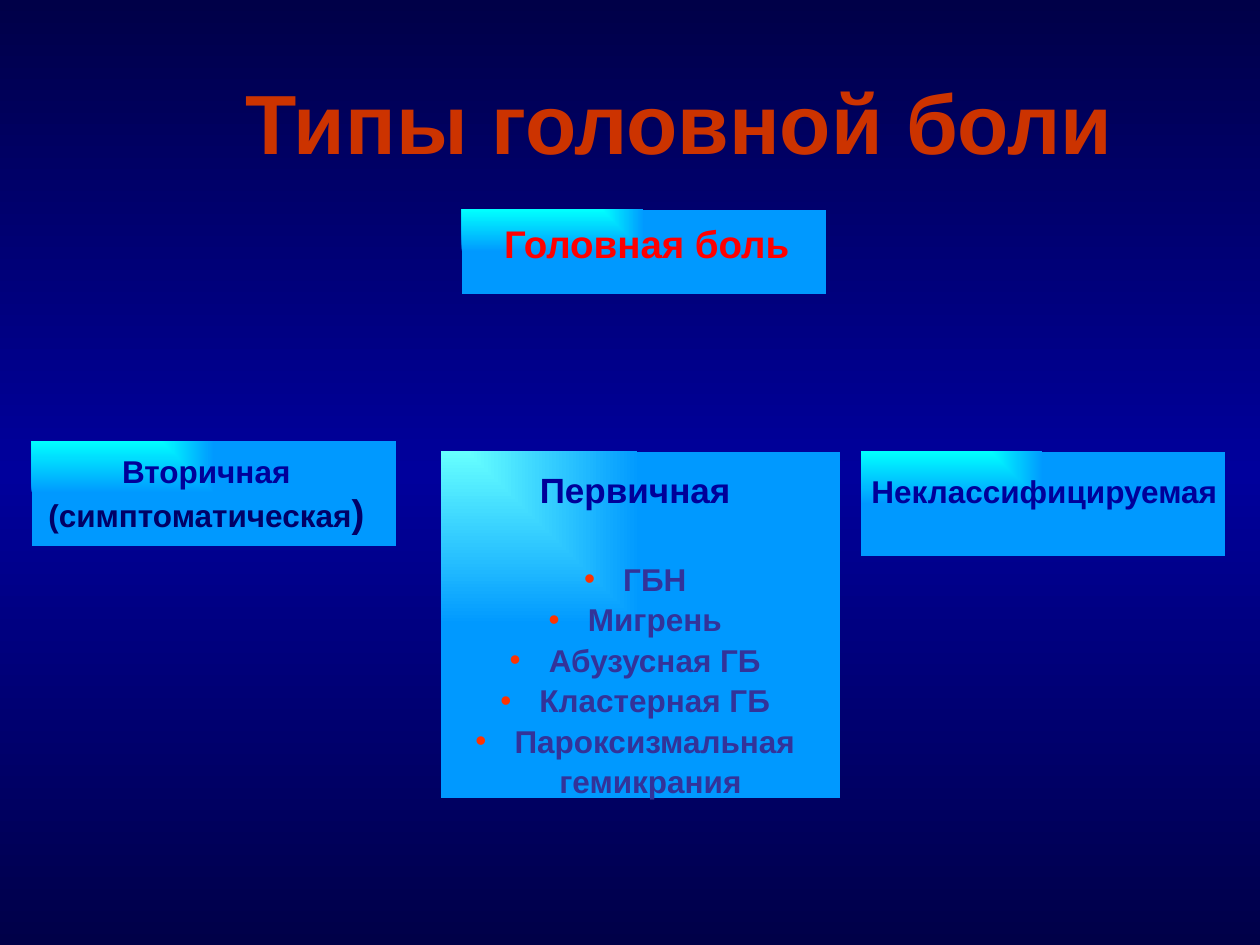
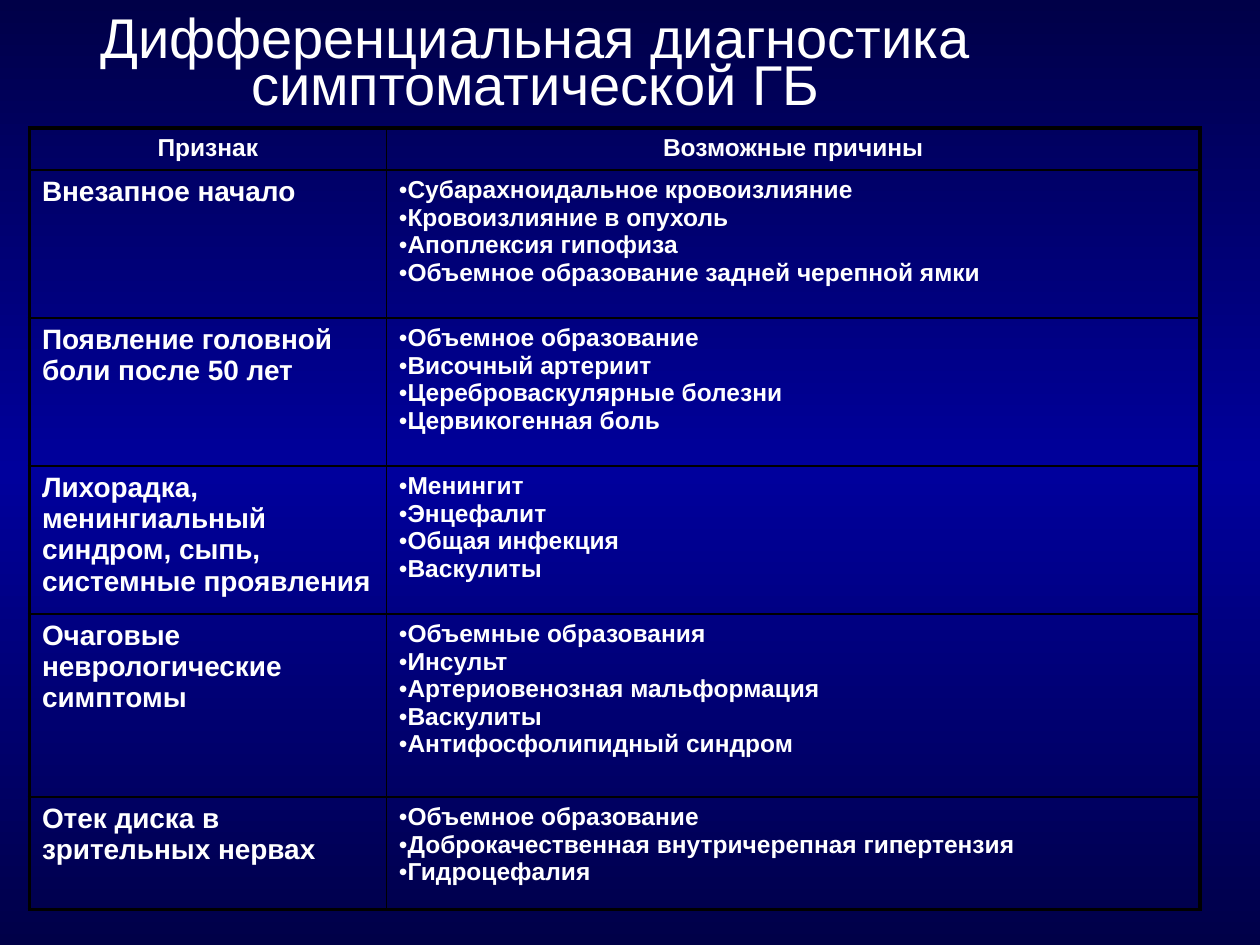
from dataclasses import dataclass

from lxml.etree import SubElement
from pptx import Presentation
from pptx.dml.color import RGBColor as RGB
from pptx.enum.shapes import MSO_SHAPE as SHAPE
from pptx.enum.text import MSO_ANCHOR as ANCHOR, PP_ALIGN as ALIGN
from pptx.oxml.ns import qn
from pptx.util import Inches, Pt


@dataclass(frozen=True)
class Theme:
    font: str = "Arial"
    backdrop: tuple = ((0, "000048"), (50, "00009C"), (100, "000048"))
    glow: tuple = ((0, "00FFFF"), (100, "0099FF"))
    soft_glow: tuple = ((0, "66FFFF"), (100, "0099FF"))
    rust: str = "CC3300"
    red: str = "FF0000"
    bullet: str = "FF3300"
    blue: str = "000099"
    navy: str = "000066"
    indigo: str = "333399"
    white: str = "FFFFFF"
    line: str = "000000"
    headline: int = 48
    heading: int = 32
    root: int = 22
    primary: int = 20
    label: int = 18
    sign: int = 16
    cause: int = 14
    frame: float = 2.25
    rule: float = 1


class Deck:
    COLS, ROWS = 120, 90

    def __init__(self, theme):
        self.theme = theme
        self.prs = Presentation()
        self.prs.slide_width, self.prs.slide_height = Inches(10), Inches(7.5)
        self.s = None

    def x(self, cols):
        return round(self.prs.slide_width * cols / self.COLS)

    def y(self, rows):
        return round(self.prs.slide_height * rows / self.ROWS)

    def place(self, col, row, cols, rows):
        return self.x(col), self.y(row), self.x(cols), self.y(rows)

    def gradient(self, fill, element, stops, corner=False):
        fill.gradient()
        grad = next(element.iter(qn("a:gradFill")))
        for child in list(grad):
            grad.remove(child)
        gs_list = SubElement(grad, qn("a:gsLst"))
        for pos, color in stops:
            gs = SubElement(gs_list, qn("a:gs"), pos=str(pos * 1000))
            SubElement(gs, qn("a:srgbClr"), val=color)
        if corner:
            way = SubElement(grad, qn("a:path"), path="shape")
            SubElement(way, qn("a:fillToRect"), r="100000", b="100000")
        else:
            SubElement(grad, qn("a:lin"), ang="5400000", scaled="0")

    def slide(self):
        self.s = self.prs.slides.add_slide(self.prs.slide_layouts[6])
        self.gradient(self.s.background.fill, self.s.element, self.theme.backdrop)

    def panel(self, at, stops):
        sp = self.s.shapes.add_shape(SHAPE.RECTANGLE, *self.place(*at))
        sp.shadow.inherit = False
        sp.line.fill.background()
        self.gradient(sp.fill, sp.element, stops, corner=True)

    def box(self, at, wrap=True, inset=True, anchor=ANCHOR.TOP):
        tf = self.s.shapes.add_textbox(*self.place(*at)).text_frame
        tf.word_wrap = wrap
        tf.vertical_anchor = anchor
        if not inset:
            tf.margin_left = tf.margin_right = tf.margin_top = tf.margin_bottom = 0
        return tf

    def para(self, tf, align=ALIGN.LEFT, spacing=None, before=None):
        p = tf.paragraphs[0]
        if p.runs:
            p = tf.add_paragraph()
        p.alignment = align
        if spacing:
            p.line_spacing = spacing
        if before:
            p.space_before = Pt(before)
        return p

    def run(self, p, text, size, color, bold=True):
        r = p.add_run()
        r.text = text
        r.font.name, r.font.size, r.font.bold = self.theme.font, Pt(size), bold
        r.font.color.rgb = RGB.from_string(color)

    def bullet(self, p, hang=0, color=None):
        ppr = p._p.get_or_add_pPr()
        ppr.set("marL", str(self.x(hang)))
        ppr.set("indent", str(-self.x(hang)))
        if color:
            SubElement(SubElement(ppr, qn("a:buClr")), qn("a:srgbClr"), val=color)
        SubElement(ppr, qn("a:buFont"), typeface=self.theme.font)
        SubElement(ppr, qn("a:buChar"), char="•")

    def title(self, at, text, size, color, bold, spacing=None):
        p = self.para(self.box(at, anchor=ANCHOR.MIDDLE), ALIGN.CENTER, spacing)
        self.run(p, text, size, color, bold)

    def label(self, at, text, size, color):
        p = self.para(self.box(at, wrap=False, inset=False))
        self.run(p, text, size, color)

    def borders(self, cell, outer):
        tc_pr = cell._tc.get_or_add_tcPr()
        for side, is_outer in zip("LRTB", outer):
            width = self.theme.frame if is_outer else self.theme.rule
            ln = SubElement(tc_pr, qn(f"a:ln{side}"), w=str(Pt(width)))
            fill = SubElement(ln, qn("a:solidFill"))
            SubElement(fill, qn("a:srgbClr"), val=self.theme.line)

    def table(self, at, widths, heights, header, rows):
        t = self.theme
        frame = self.s.shapes.add_table(len(heights), len(widths), *self.place(*at))
        tbl = frame.table
        tbl.first_row = tbl.horz_banding = False
        for col, width in zip(tbl.columns, widths):
            col.width = self.x(width)
        for row, height in zip(tbl.rows, heights):
            row.height = self.y(height)
        last_i, last_j = len(heights) - 1, len(widths) - 1
        for i in range(len(heights)):
            for j in range(len(widths)):
                cell = tbl.cell(i, j)
                self.borders(cell, (j == 0, j == last_j, i == 0, i == last_i))
                cell.fill.background()
        for j, text in enumerate(header):
            p = self.para(tbl.cell(0, j).text_frame, ALIGN.CENTER)
            self.run(p, text, t.cause, t.white)
        for i, (sign, causes) in enumerate(rows, 1):
            self.run(self.para(tbl.cell(i, 0).text_frame), sign, t.sign, t.white)
            for cause in causes:
                p = self.para(tbl.cell(i, 1).text_frame)
                self.bullet(p)
                self.run(p, cause, t.cause, t.white)


PRIMARY = ("ГБН", "Мигрень", "Абузусная ГБ", "Кластерная ГБ", "Пароксизмальная гемикрания")

DIAGNOSES = (
    ("Внезапное начало",
     ("Субарахноидальное кровоизлияние", "Кровоизлияние в опухоль",
      "Апоплексия гипофиза", "Объемное образование задней черепной ямки")),
    ("Появление головной боли после 50 лет",
     ("Объемное образование", "Височный артериит",
      "Цереброваскулярные болезни", "Цервикогенная боль")),
    ("Лихорадка, менингиальный синдром, сыпь, системные проявления",
     ("Менингит", "Энцефалит", "Общая инфекция", "Васкулиты")),
    ("Очаговые неврологические симптомы",
     ("Объемные образования", "Инсульт", "Артериовенозная мальформация",
      "Васкулиты", "Антифосфолипидный синдром")),
    ("Отек диска в зрительных нервах",
     ("Объемное образование", "Доброкачественная внутричерепная гипертензия",
      "Гидроцефалия")),
)


def headache_types(deck):
    t = deck.theme
    deck.slide()
    for at in ((3, 42, 34.7, 10), (82, 43, 34.7, 10), (44, 20, 34.7, 8)):
        deck.panel(at, t.glow)
    deck.panel((42, 43, 38, 33), t.soft_glow)
    deck.title((9.4, 4, 110.6, 15), "Типы головной боли", t.headline, t.rust, True)
    deck.label((48, 21, 27.7, 4.4), "Головная боль", t.root, t.red)
    deck.label((83, 45, 33.1, 3.6), "Неклассифицируемая", t.label, t.blue)

    tf = deck.box((4, 43, 31.3, 8), inset=False)
    deck.run(deck.para(tf, ALIGN.CENTER), "Вторичная", t.label, t.blue)
    p = deck.para(tf, ALIGN.CENTER)
    deck.run(p, "(симптоматическая", t.label, t.navy)
    deck.run(p, ")", t.root, t.navy)

    tf = deck.box((43, 44, 35, 29))
    deck.run(deck.para(tf, ALIGN.CENTER), "Первичная", t.primary, t.blue)
    for i, name in enumerate(PRIMARY):
        p = deck.para(tf, ALIGN.CENTER, 1.07, 0 if i else 27)
        deck.bullet(p, 2.9, t.bullet)
        deck.run(p, f" {name}", t.label, t.indigo)


def differential_diagnosis(deck):
    t = deck.theme
    deck.slide()
    deck.title((0, 0, 102, 13), "Дифференциальная диагностика симптоматической ГБ",
               t.heading, t.white, False, 0.7)
    deck.table((2.8, 12.2, 111.5, 74.4), (34, 77.5), (4, 14.1, 14.1, 14.1, 17.4, 10.7),
               ("Признак", "Возможные причины"), DIAGNOSES)


def main():
    deck = Deck(Theme())
    headache_types(deck)
    differential_diagnosis(deck)
    deck.prs.save("out.pptx")


if __name__ == "__main__":
    main()
